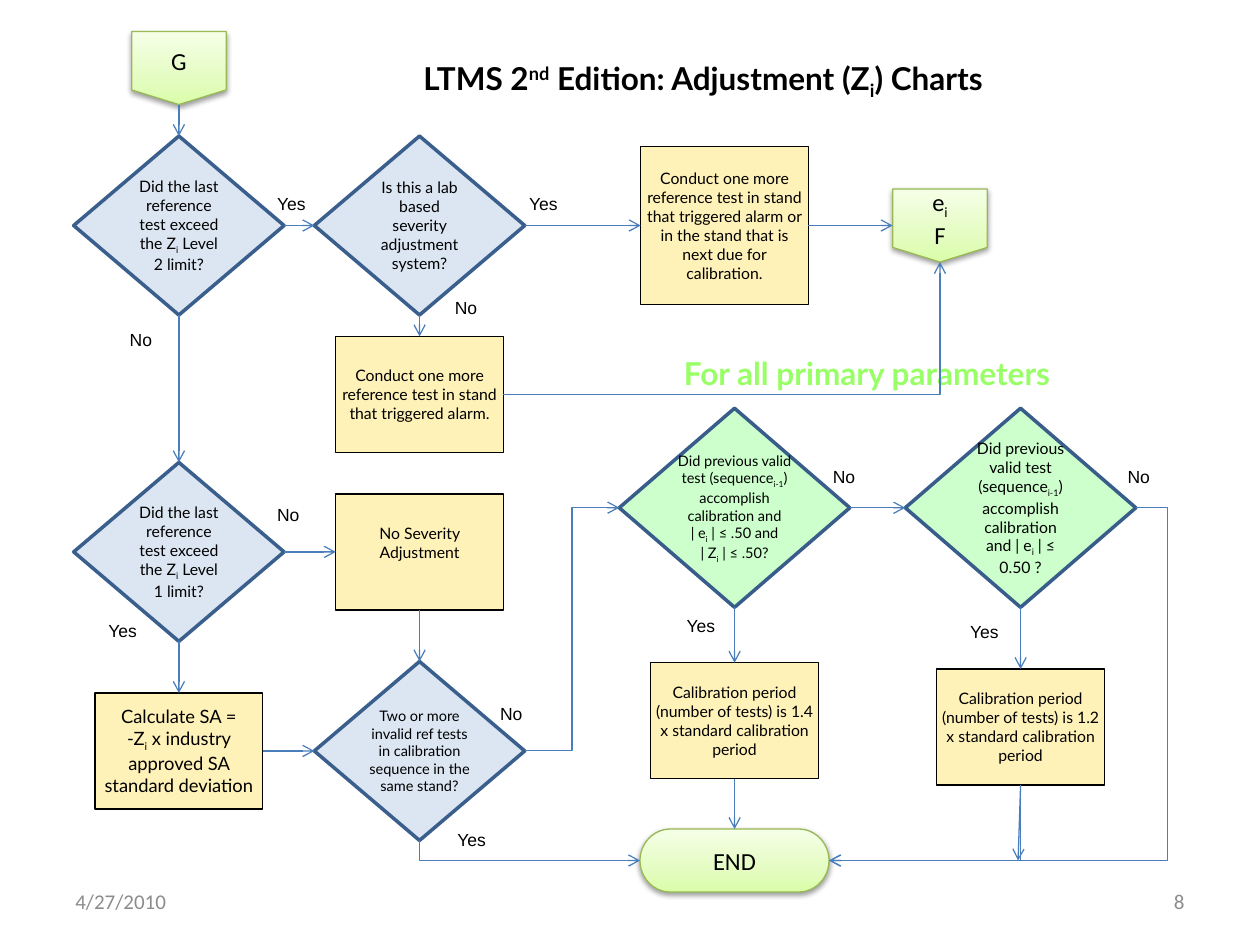
from pptx import Presentation
from pptx.dml.color import RGBColor
from pptx.enum.shapes import MSO_CONNECTOR, MSO_SHAPE
from pptx.enum.text import MSO_ANCHOR, PP_ALIGN
from pptx.oxml import parse_xml
from pptx.oxml.ns import nsdecls, qn
from pptx.util import Inches, Pt

STRAIGHT, ELBOW = MSO_CONNECTOR.STRAIGHT, MSO_CONNECTOR.ELBOW
LEFT, CENTER, RIGHT = PP_ALIGN.LEFT, PP_ALIGN.CENTER, PP_ALIGN.RIGHT
TOP, MIDDLE = MSO_ANCHOR.TOP, MSO_ANCHOR.MIDDLE
SITES = {"top": 0, "left": 1, "bottom": 2, "right": 3}

THEME = {
    "head": ("Lato", 18, "000000", True),
    "note": ("Lato", 18, "99FF66", True),
    "step": ("Lato", 9, "000000", False),
    "small": ("Lato", 8.3, "000000", False),
    "large": ("Lato", 10.5, "000000", False),
    "node": ("Calibri", 14, "000000", False),
    "label": ("Arial", 10, "000000", False),
    "foot": ("Calibri", 12, "8C8C8C", False),
    "link": "4A7EBB",
    "glow": [(0, "DAFDA7"), (35, "E4FCC2"), (100, "F5FFE7")],
}
ROOMY, SNUG, NONE = (0.1, 0.05, 0.1, 0.05), (0.03, 0.02, 0.03, 0.02), (0, 0, 0, 0)
RAISED = (0.03, 0.02, 0.03, 0.17)

# kind: preset, width, height, fill, line colour, line width
KINDS = {
    "ask": (MSO_SHAPE.FLOWCHART_DECISION, 1.67, 1.42, "DCE6F2", "3A5F8C", 2),
    "check": (MSO_SHAPE.FLOWCHART_DECISION, 1.83, 1.58, "CCFFCC", "385D8A", 2),
    "task": (MSO_SHAPE.FLOWCHART_PROCESS, 1.33, 0.92, "FFF2B9", "000000", 0.75),
    "tall": (MSO_SHAPE.FLOWCHART_PROCESS, 1.33, 1.25, "FFF2B9", "000000", 0.75),
    "page": (MSO_SHAPE.FLOWCHART_OFFPAGE_CONNECTOR, 0.75, 0.58, None, "98B955", 0.75),
    "stop": (MSO_SHAPE.FLOWCHART_TERMINATOR, 1.5, 0.5, None, "98B955", 0.75),
}

# name: kind, centre x, centre y, type style, insets, text (~sub~, ~^super~)
NODES = {
    "g": ("page", 1.42, 0.54, "node", ROOMY, "G"),
    "level 2": ("ask", 1.42, 1.79, "step", ROOMY,
                "Did the last reference test exceed the Z~i~ Level 2 limit?"),
    "lab": ("ask", 3.33, 1.79, "step", ROOMY,
            "Is this a lab based severity adjustment system?"),
    "next": ("tall", 5.75, 1.79, "step", SNUG,
             "Conduct one more reference test in stand that triggered alarm "
             "or in the stand that is next due for calibration."),
    "f": ("page", 7.46, 1.79, "node", ROOMY, "e~i~\nF"),
    "same": ("task", 3.33, 3.13, "step", NONE,
             "Conduct one more reference test in stand that triggered alarm."),
    "level 1": ("ask", 1.42, 4.38, "step", ROOMY,
                "Did the last reference test exceed the Z~i~ Level 1 limit?"),
    "none": ("task", 3.33, 4.38, "step", RAISED, "No Severity Adjustment"),
    "sa": ("task", 1.42, 5.96, "large", NONE,
           "Calculate SA =\n-Z~i~ x industry approved SA standard deviation"),
    "two": ("ask", 3.33, 5.96, "small", NONE,
            "Two or more invalid ref tests in calibration sequence in the same stand?"),
    "both": ("check", 5.83, 4.03, "small", NONE,
             "Did previous valid test (sequence~i-1~) accomplish calibration and\n"
             "| e~i~ | ≤ .50 and\n| Z~i~ | ≤ .50?"),
    "one": ("check", 8.1, 4.03, "step", ROOMY,
            "Did previous valid test (sequence~i-1~) accomplish calibration "
            "and | e~i~ | ≤ 0.50 ?"),
    "long": ("task", 5.83, 5.72, "step", SNUG,
             "Calibration period (number of tests) is 1.4 x standard calibration period"),
    "short": ("task", 8.1, 5.77, "step", SNUG,
              "Calibration period (number of tests) is 1.2 x standard calibration period"),
    "end": ("stop", 5.83, 6.83, "node", ROOMY, "END"),
}

LABELS = {
    "Yes": [(2.17, 1.5), (4.17, 1.5), (0.83, 4.89), (5.42, 4.85), (7.67, 4.9), (3.6, 6.55)],
    "No": [(1, 2.58), (3.58, 2.33), (2.17, 3.97), (6.58, 3.67), (8.92, 3.67), (3.94, 5.55)],
}

ACROSS = [("level 2", "lab"), ("lab", "next"), ("next", "f"), ("level 1", "none"),
          ("sa", "two"), ("both", "one")]
DOWN = [("g", "level 2"), ("level 2", "level 1"), ("level 1", "sa"), ("lab", "same"),
        ("none", "two"), ("both", "long"), ("long", "end"), ("one", "short")]
# from, side, to, side, route
BENDS = [
    ("two", "right", "both", "left", "middle"),
    ("two", "bottom", "end", "left", "down"),
    ("one", "right", "end", "right", "around"),
    ("short", "bottom", "end", "right", "down"),
    ("same", "right", "f", "bottom", "corner"),
]
REACH = 0.25  # how far the "around" route runs past its start


def write(shape, text, style, align=LEFT, anchor=TOP, insets=ROOMY):
    frame = shape.text_frame
    frame.word_wrap = True
    frame.vertical_anchor = anchor
    (frame.margin_left, frame.margin_top,
     frame.margin_right, frame.margin_bottom) = map(Inches, insets)
    name, size, color, bold = THEME[style]
    for row, line in enumerate(text.split("\n")):
        para = frame.add_paragraph() if row else frame.paragraphs[0]
        para.alignment = align
        font = para.font
        font.name, font.size, font.bold = name, Pt(size), bold
        font.color.rgb = RGBColor.from_string(color)
        for spot, part in enumerate(line.split("~")):
            if not part:
                continue
            run = para.add_run()
            run.text = part.lstrip("^")
            if spot % 2:
                base = "30000" if part.startswith("^") else "-25000"
                run._r.get_or_add_rPr().set("baseline", base)


def add_text(slide, box, text, style, **look):
    write(slide.shapes.add_textbox(*map(Inches, box)), text, style, **look)


def add_glow(shape):
    """Give the shape a three-stop green fill and a soft shadow below."""
    stops = "".join(
        f'<a:gs pos="{at * 1000}"><a:srgbClr val="{color}"/></a:gs>'
        for at, color in THEME["glow"])
    props = shape._element.spPr
    props.find(qn("a:prstGeom")).addnext(parse_xml(
        f'<a:gradFill {nsdecls("a")} rotWithShape="1"><a:gsLst>{stops}</a:gsLst>'
        '<a:lin ang="16200000" scaled="0"/></a:gradFill>'))
    props.find(qn("a:effectLst")).append(parse_xml(
        f'<a:outerShdw {nsdecls("a")} blurRad="40000" dist="20000" dir="5400000" '
        'rotWithShape="0"><a:srgbClr val="000000"><a:alpha val="38000"/>'
        '</a:srgbClr></a:outerShdw>'))


def add_node(slide, kind, x, y, style, insets, text):
    preset, wide, high, fill, edge, weight = KINDS[kind]
    box = (x - wide / 2, y - high / 2, wide, high)
    shape = slide.shapes.add_shape(preset, *map(Inches, box))
    shape.line.color.rgb = RGBColor.from_string(edge)
    shape.line.width = Pt(weight)
    shape.shadow.inherit = False
    if fill:
        shape.fill.solid()
        shape.fill.fore_color.rgb = RGBColor.from_string(fill)
    else:
        add_glow(shape)
    write(shape, text, style, CENTER, MIDDLE, insets)
    return shape


def add_link(slide, start, side, goal=None, into=None, form=STRAIGHT, to=(0, 0)):
    """Run an arrow to a side of the goal, or to a free point."""
    link = slide.shapes.add_connector(form, 0, 0, *map(Inches, to))
    link.begin_connect(start, SITES[side])
    if goal is not None:
        link.end_connect(goal, SITES[into])
    link.line.color.rgb = RGBColor.from_string(THEME["link"])
    link.line.width = Pt(0.75)
    props = link._element.spPr
    props.find(qn("a:ln")).append(parse_xml(f'<a:tailEnd {nsdecls("a")} type="arrow"/>'))
    props.append(parse_xml(f'<a:effectLst {nsdecls("a")}/>'))
    return link


def route(link, way):
    """Shape an elbow: one corner, down first, or around the far side."""
    props = link._element.spPr
    geom, frame = props.find(qn("a:prstGeom")), props.find(qn("a:xfrm"))
    if way in ("corner", "down"):
        geom.set("prst", "bentConnector2")
    if way == "down":
        ahead = link.end_x > link.begin_x
        wide, high = link.width, link.height
        mid_x, mid_y = link.left + wide // 2, link.top + high // 2
        link.left, link.top = mid_x - high // 2, mid_y - wide // 2
        link.width, link.height = high, wide
        frame.set("rot", "16200000" if ahead else "5400000")
        frame.set("flipH", "1" if ahead else "0")
    if way == "around":
        bend = -round(Inches(REACH) / link.width * 100000)
        geom.get_or_add_avLst().append(parse_xml(
            f'<a:gd {nsdecls("a")} name="adj1" fmla="val {bend}"/>'))


def main():
    deck = Presentation()
    deck.slide_width, deck.slide_height = Inches(10), Inches(7.5)
    slide = deck.slides.add_slide(deck.slide_layouts[5])

    title = slide.shapes.title
    title.left, title.top, title.width, title.height = map(Inches, (2.58, 0.27, 6, 0.73))
    write(title, "LTMS 2~^nd~ Edition: Adjustment (Z~i~) Charts", "head",
          CENTER, MIDDLE, (0.05, 0.04, 0.05, 0.04))
    add_text(slide, (5.33, 2.76, 3.92, 0.4), "For all primary parameters", "note")
    add_text(slide, (0.5, 6.95, 2.33, 0.4), "4/27/2010", "foot", anchor=MIDDLE)
    add_text(slide, (7.17, 6.95, 2.33, 0.4), "8", "foot", align=RIGHT, anchor=MIDDLE)

    nodes = {name: add_node(slide, *data) for name, data in NODES.items()}
    for word, spots in LABELS.items():
        for x, y in spots:
            add_text(slide, (x, y, 0.4, 0.2), word, "label", insets=(0.03, 0.03, 0, 0))

    for pairs, side, into in ((ACROSS, "right", "left"), (DOWN, "bottom", "top")):
        for start, goal in pairs:
            add_link(slide, nodes[start], side, nodes[goal], into)
    add_link(slide, nodes["short"], "bottom", to=(8.08, 6.83))
    for start, side, goal, into, way in BENDS:
        route(add_link(slide, nodes[start], side, nodes[goal], into, ELBOW), way)

    deck.save("out.pptx")


if __name__ == "__main__":
    main()
